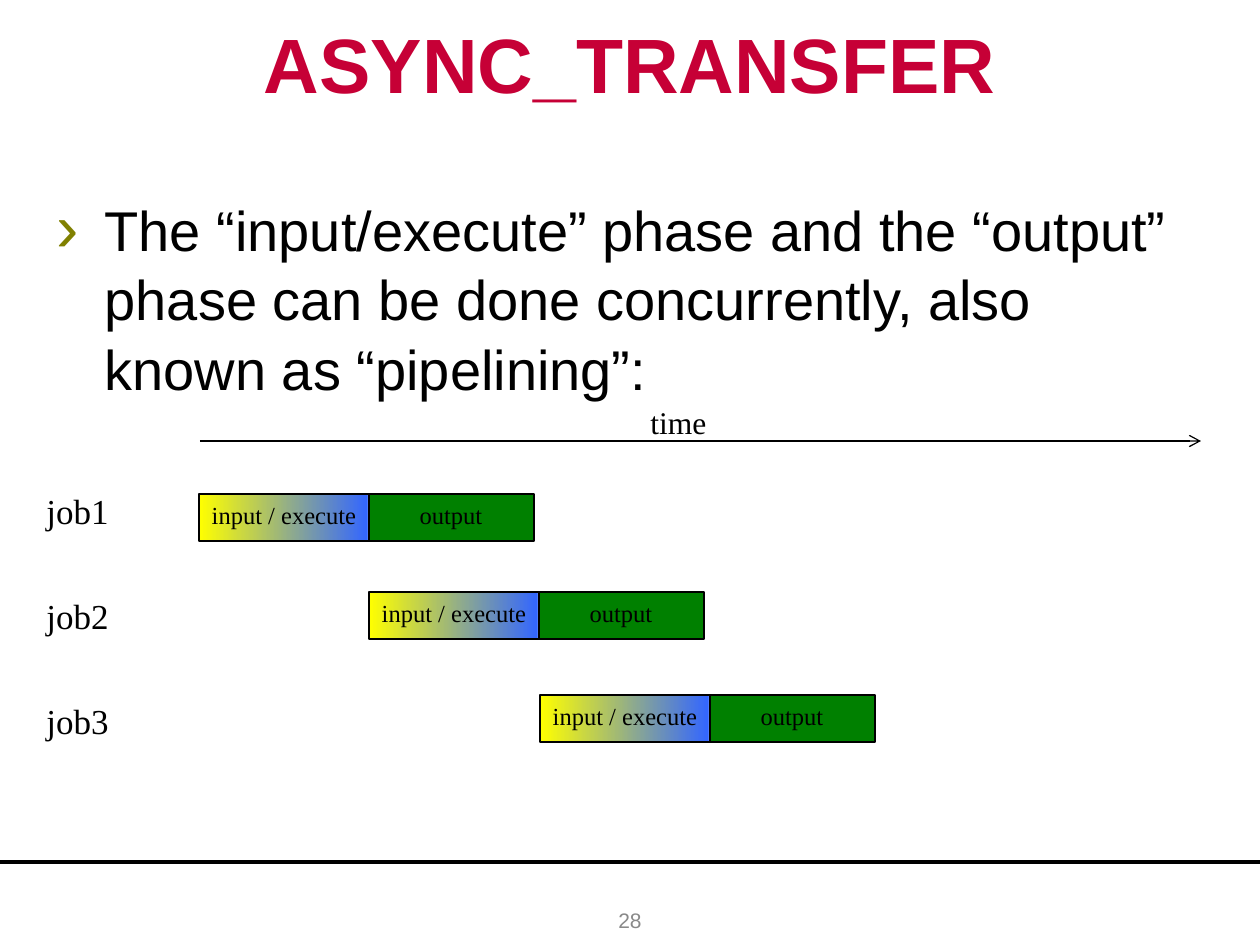
from copy import deepcopy

from lxml import etree
from pptx import Presentation
from pptx.dml.color import RGBColor
from pptx.enum.shapes import MSO_CONNECTOR, MSO_SHAPE
from pptx.enum.text import MSO_ANCHOR, MSO_AUTO_SIZE, PP_ALIGN
from pptx.oxml.ns import qn
from pptx.util import Emu, Pt

EMU_PER_PX = 914400 / 126
RECTANGLE = MSO_SHAPE.RECTANGLE
STRAIGHT = MSO_CONNECTOR.STRAIGHT
TOP, MIDDLE = MSO_ANCHOR.TOP, MSO_ANCHOR.MIDDLE
LEFT, CENTER = PP_ALIGN.LEFT, PP_ALIGN.CENTER
FIT_SHAPE, NO_FIT = MSO_AUTO_SIZE.SHAPE_TO_FIT_TEXT, MSO_AUTO_SIZE.NONE

BLACK, CRIMSON, GRAY = "000000", "C60036", "898989"
OLIVE, GREEN, YELLOW, BLUE, WHITE = "808000", "008000", "FFFF00", "3366FF", "FFFFFF"
SANS, SERIF = "Arial", "Times New Roman"


def px(length):
    return Emu(round(length * EMU_PER_PX))


def color(value):
    return RGBColor.from_string(value)


class SlideBuilder:
    def __init__(self, deck):
        self.page = deck.slides.add_slide(deck.slide_layouts[1])

    def place(self, shape, left, top, width, height):
        shape.left, shape.top = px(left), px(top)
        shape.width, shape.height = px(width), px(height)

    def add_text(self, shape, text, size, font, ink=BLACK, align=LEFT, bold=False):
        para = shape.text_frame.paragraphs[0]
        para.alignment = align
        span = para.add_run()
        span.text = text
        span.font.size = Pt(size)
        span.font.name = font
        span.font.bold = bold
        span.font.color.rgb = color(ink)
        return para

    def title(self, text, *area):
        shape = self.page.shapes.title
        self.place(shape, *area)
        shape.text_frame.auto_size = NO_FIT
        shape.text_frame.vertical_anchor = MIDDLE
        self.add_text(shape, text, 44, SANS, CRIMSON, CENTER, True)

    def bullet(self, text, *area):
        shape = self.page.placeholders[1]
        self.place(shape, *area)
        shape.text_frame.auto_size = NO_FIT
        para = self.add_text(shape, text, 32, SANS)
        para.space_before = Pt(0)
        para.line_spacing = 1.04
        properties = para._p.get_or_add_pPr()
        properties.set("marL", str(px(48)))
        properties.set("indent", str(px(-48)))
        bullet_color = etree.SubElement(properties, qn("a:buClr"))
        etree.SubElement(bullet_color, qn("a:srgbClr"), val=OLIVE)
        etree.SubElement(properties, qn("a:buSzPct"), val="120000")
        etree.SubElement(properties, qn("a:buFont"), typeface=SANS)
        etree.SubElement(properties, qn("a:buChar"), char="›")

    def label(self, text, left, top, width, height, size, font=SERIF,
              ink=BLACK, align=LEFT, anchor=TOP, fit=FIT_SHAPE):
        box = self.page.shapes.add_textbox(px(left), px(top), px(width), px(height))
        box.text_frame.word_wrap = True
        box.text_frame.auto_size = fit
        box.text_frame.vertical_anchor = anchor
        self.add_text(box, text, size, font, ink, align)

    def line(self, left, right, y, weight, arrow=False):
        line = self.page.shapes.add_connector(STRAIGHT, px(left), px(y), px(right), px(y))
        line.line.color.rgb = color(BLACK)
        line.line.width = Pt(weight)
        properties = line._element.spPr
        if arrow:
            etree.SubElement(properties.find(qn("a:ln")), qn("a:tailEnd"), type="arrow")
        etree.SubElement(properties, qn("a:effectLst"))

    def phase(self, group, text, left, top, width, height):
        box = group.shapes.add_shape(RECTANGLE, px(left), px(top), px(width), px(height))
        box.shadow.inherit = False
        box.line.color.rgb = color(BLACK)
        box.line.width = Pt(0.75)
        box.text_frame.word_wrap = False
        box.text_frame.vertical_anchor = TOP
        self.add_text(box, text, 14, SERIF, align=CENTER)
        return box

    def job(self, left, top):
        group = self.page.shapes.add_group_shape()
        output = self.phase(group, "output", left + 169, top, 166, 47)
        output.fill.solid()
        output.fill.fore_color.rgb = color(GREEN)
        execute = self.phase(group, "input / execute", left, top, 170, 47)
        self.gradient(execute, (0, YELLOW), (0.99, BLUE), (1, WHITE))

    def gradient(self, shape, *stops):
        shape.fill.gradient()
        shape.fill.gradient_angle = 0
        stop_list = shape._element.spPr.find(".//" + qn("a:gsLst"))
        stop_list.append(deepcopy(stop_list[-1]))
        for stop, (position, shade) in zip(shape.fill.gradient_stops, stops):
            stop.position = position
            stop.color.rgb = color(shade)


def main():
    deck = Presentation()
    deck.slide_width, deck.slide_height = px(1260), px(945)
    slide = SlideBuilder(deck)
    slide.line(0, 1260, 862, 2.25)
    slide.bullet("The “input/execute” phase and the “output” phase can be done "
                 "concurrently, also known as “pipelining”:", 44, 186, 1158, 582)
    slide.title("ASYNC_TRANSFER", 0, 0, 1260, 126)
    slide.label("28", 483, 895, 294, 50, 12, SANS, GRAY, CENTER, MIDDLE, NO_FIT)
    slide.line(200, 1201, 441, 0.75, arrow=True)
    slide.label("time", 638, 397, 209, 50, 18)
    for index, (left, top) in enumerate([(199, 494), (369, 592), (540, 695)]):
        slide.label(f"job{index + 1}", 34, 483 + 105 * index, 132, 55, 20)
        slide.job(left, top)
    deck.save("out.pptx")


if __name__ == "__main__":
    main()
